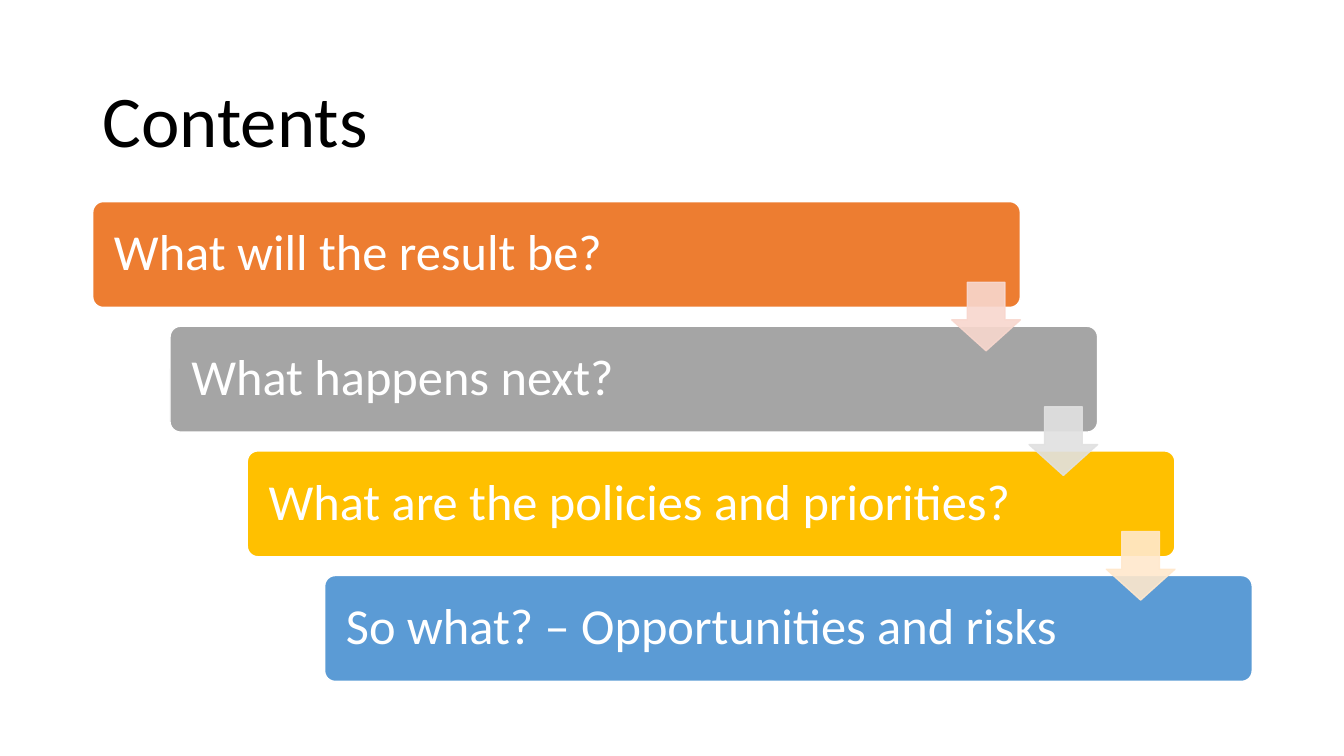
from dataclasses import dataclass

from lxml.etree import SubElement
from pptx import Presentation
from pptx.dml.color import RGBColor
from pptx.enum.shapes import MSO_SHAPE as Shape
from pptx.enum.text import MSO_ANCHOR as Anchor, PP_ALIGN as Align
from pptx.oxml.ns import qn
from pptx.util import Inches, Pt

TITLE = "Contents"
STEPS = [
    ("What will the result be?", "ED7D31", "F8D7CE"),
    ("What happens next?", "A5A5A5", "E1E1E1"),
    ("What are the policies and priorities?", "FFC000", "FFE8CC"),
    ("So what? – Opportunities and risks", "5B9BD5", None),
]


@dataclass(frozen=True)
class Theme:
    font: str = "Calibri"
    title_size: int = 52
    step_size: int = 36
    title_color: str = "000000"
    step_color: str = "FFFFFF"
    outline: str = "FFFFFF"
    arrow_opacity: int = 90


THEME = Theme()
LEFT, TOP = 0.92, 2.0
BAR_WIDTH, BAR_HEIGHT = 9.2, 1.05
STEP_X, STEP_Y = 2.3 / 3, 3.71 / 3
ARROW_SIZE, ARROW_DROP = 0.68, 0.8
TEXT_INSET = 0.18


def write(frame, text, size, color):
    frame.word_wrap = True
    frame.vertical_anchor = Anchor.MIDDLE
    paragraph = frame.paragraphs[0]
    paragraph.text = text
    paragraph.alignment = Align.LEFT
    paragraph.line_spacing = 0.9
    paragraph.font.name = THEME.font
    paragraph.font.size = Pt(size)
    paragraph.font.color.rgb = RGBColor.from_string(color)


def add_block(slide, kind, box, adjustments, fill, outline):
    block = slide.shapes.add_shape(kind, *map(Inches, box))
    block.shadow.inherit = False
    for index, value in enumerate(adjustments):
        block.adjustments[index] = value
    block.fill.solid()
    block.fill.fore_color.rgb = RGBColor.from_string(fill)
    block.line.color.rgb = RGBColor.from_string(outline)
    block.line.width = Pt(1)
    return block


def add_bar(slide, left, top, question, color):
    bar = add_block(slide, Shape.ROUNDED_RECTANGLE,
                    (left, top, BAR_WIDTH, BAR_HEIGHT), [0.1], color, THEME.outline)
    bar.text_frame.margin_left = bar.text_frame.margin_right = Inches(TEXT_INSET)
    write(bar.text_frame, question, THEME.step_size, THEME.step_color)


def add_arrow(slide, left, top, color):
    box = (left + BAR_WIDTH - ARROW_SIZE, top + ARROW_DROP, ARROW_SIZE, ARROW_SIZE)
    arrow = add_block(slide, Shape.DOWN_ARROW, box, [0.55, 0.45], color, color)
    for tint in arrow.element.spPr.iter(qn("a:srgbClr")):
        SubElement(tint, qn("a:alpha"), val=str(THEME.arrow_opacity * 1000))


def main():
    deck = Presentation()
    deck.slide_width, deck.slide_height = Inches(13.33), Inches(7.5)
    slide = deck.slides.add_slide(deck.slide_layouts[6])

    heading = slide.shapes.add_textbox(*map(Inches, (LEFT, 0.61, 11.5, 1.24)))
    write(heading.text_frame, TITLE, THEME.title_size, THEME.title_color)

    corners = [(LEFT + i * STEP_X, TOP + i * STEP_Y) for i in range(len(STEPS))]
    for (left, top), (question, color, _) in zip(corners, STEPS):
        add_bar(slide, left, top, question, color)
    for (left, top), (_, _, arrow_color) in zip(corners, STEPS):
        if arrow_color:
            add_arrow(slide, left, top, arrow_color)

    deck.save("out.pptx")


if __name__ == "__main__":
    main()
